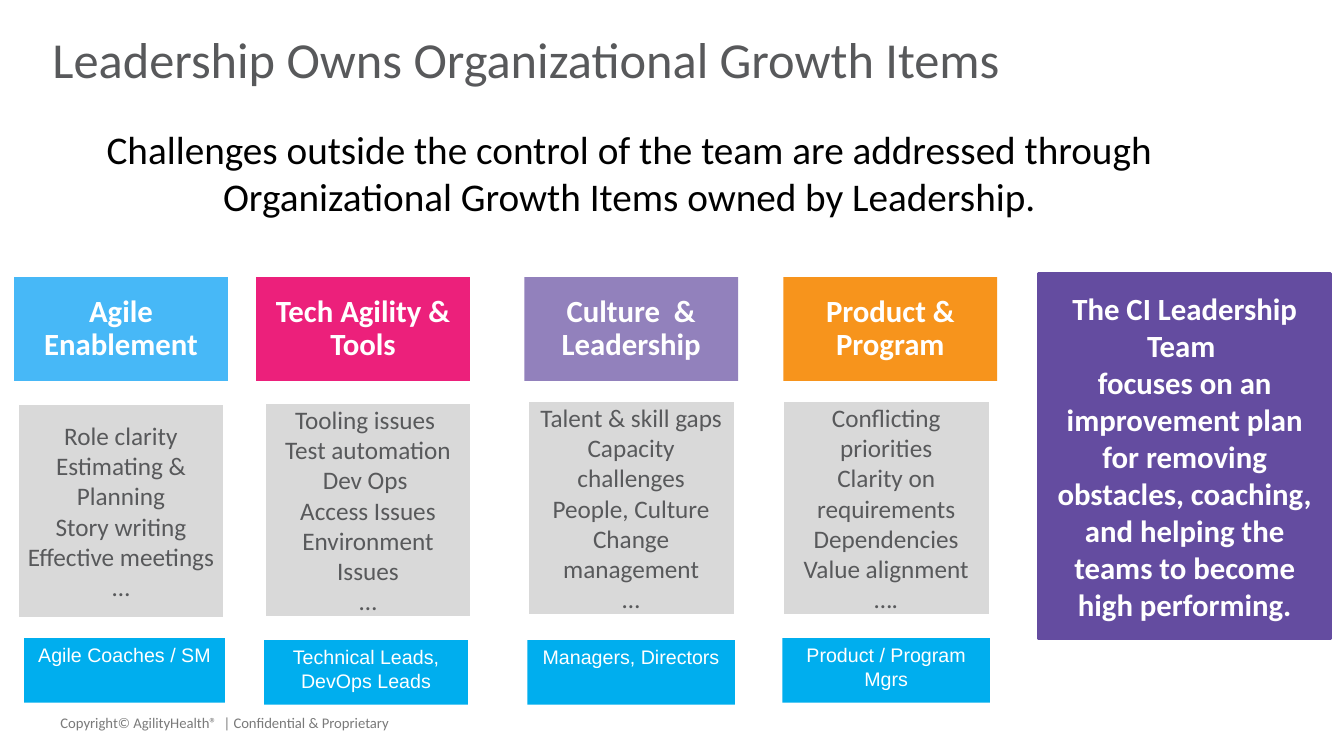
from dataclasses import dataclass

from pptx import Presentation
from pptx.dml.color import RGBColor
from pptx.enum.shapes import MSO_SHAPE
from pptx.enum.text import MSO_ANCHOR, PP_ALIGN
from pptx.util import Inches, Pt

WHITE = "FFFFFF"
GREY = "58595B"
PURPLE = "644CA0"


@dataclass
class Box:
    left: float
    top: float
    width: float
    height: float

    def inner(self, dx, dy, width, height):
        return Box(self.left + dx, self.top + dy, width, height)

    def lengths(self):
        return [Inches(v) for v in (self.left, self.top, self.width, self.height)]


@dataclass
class Column:
    left: float
    color: str
    heading: str
    issues: list
    issues_at: tuple  # offset from the column's top left corner
    owner: str
    owner_at: tuple
    owner_width: float


COLUMNS = [
    Column(0.14, "47B8F7", "Agile Enablement",
           ["Role clarity", "Estimating & Planning", "Story writing",
            "Effective meetings", "…"],
           (0.03, 1.25), "Agile Coaches / SM", (0.1, 3.58), 1.99),
    Column(2.54, "EC207B", "Tech Agility & Tools",
           ["Tooling issues ", "Test automation", "Dev Ops ",
            "Access Issues Environment Issues", "…"],
           (0.08, 1.24), "Technical Leads, DevOps Leads", (0.08, 3.6), 2.02),
    Column(5.2, "9281BC", "Culture  & Leadership",
           ["Talent & skill gaps", "Capacity challenges", "People, Culture",
            "Change management", "…"],
           (0.03, 1.22), "Managers, Directors", (0.03, 3.6), 2.06),
    Column(7.77, "F7941C", "Product & Program",
           ["Conflicting priorities", "Clarity on requirements", "Dependencies",
            "Value alignment", "…."],
           (-0.01, 1.22), "Product / Program Mgrs", (-0.01, 3.58), 2.06),
]


def rgb(color):
    return RGBColor.from_string(color)


def write(shape, paragraphs, size, color, font="Calibri", bold=False,
          align=PP_ALIGN.CENTER, anchor=MSO_ANCHOR.TOP, spacing=None,
          margins=(0.1, 0.05)):
    """Fill a shape with formatted paragraphs."""
    frame = shape.text_frame
    frame.word_wrap = True
    frame.vertical_anchor = anchor
    frame.margin_left = frame.margin_right = Inches(margins[0])
    frame.margin_top = frame.margin_bottom = Inches(margins[1])
    for index, text in enumerate(paragraphs):
        para = frame.add_paragraph() if index else frame.paragraphs[0]
        para.text = text
        para.alignment = align
        if spacing:
            para.line_spacing = spacing
        for span in para.runs:
            span.font.name = font
            span.font.size = Pt(size)
            span.font.bold = bold
            span.font.color.rgb = rgb(color)


def add_text(page, box, text, size, color, **style):
    write(page.shapes.add_textbox(*box.lengths()), [text], size, color, **style)


def add_panel(page, box, fill, paragraphs, size, color, line=None, **style):
    panel = page.shapes.add_shape(MSO_SHAPE.RECTANGLE, *box.lengths())
    panel.shadow.inherit = False
    panel.fill.solid()
    panel.fill.fore_color.rgb = rgb(fill)
    if line:
        panel.line.color.rgb = rgb(line)
        panel.line.width = Pt(2)
    else:
        panel.line.fill.background()
    write(panel, paragraphs, size, color, **style)


def add_header(page, box):
    # Title and introduction
    add_text(page, box.inner(0.52, 0.3, 12.29, 0.64),
             "Leadership Owns Organizational Growth Items", 36, GREY,
             align=PP_ALIGN.LEFT, anchor=MSO_ANCHOR.MIDDLE, spacing=0.9,
             margins=(0, 0))
    add_text(page, box.inner(0.94, 1.19, 10.6, 1.04),
             "Challenges outside the control of the team are addressed through "
             "Organizational Growth Items owned by Leadership.", 28, "000000")


def add_column(page, box, column):
    # Issues, their owner and the coloured heading
    add_panel(page, box.inner(*column.issues_at, 2.06, 2.14), "D9D9D9",
              column.issues, 18, GREY, line=WHITE, anchor=MSO_ANCHOR.MIDDLE)
    add_panel(page, box.inner(*column.owner_at, column.owner_width, 0.64),
              "00AEEE", [column.owner], 14, WHITE, font="Arial")
    add_panel(page, box.inner(0, 0, box.width, 1.03), column.color,
              [column.heading], 22, WHITE, bold=True, anchor=MSO_ANCHOR.MIDDLE,
              spacing=0.9, margins=(0.05, 0.03))


def add_leadership(page, box):
    # Purple summary panel
    add_panel(page, box, PURPLE,
              ["The CI Leadership Team \vfocuses on an improvement plan for "
               "removing obstacles, coaching, and helping the teams to become "
               "high performing."],
              22, WHITE, line=PURPLE, bold=True, anchor=MSO_ANCHOR.MIDDLE)


def add_footer(page, box):
    # Copyright line
    add_text(page, box, "Copyright© AgilityHealth®  | Confidential & Proprietary",
             10.5, "7A7A7A", align=PP_ALIGN.LEFT, margins=(0, 0))


def main():
    deck = Presentation()
    deck.slide_width, deck.slide_height = Inches(13.33), Inches(7.5)
    page = deck.slides.add_slide(deck.slide_layouts[6])
    add_footer(page, Box(0.6, 7.08, 4.5, 0.28))
    add_header(page, Box(0, 0, 13.33, 2.5))
    add_leadership(page, Box(10.3, 2.71, 2.9, 3.63))
    for column in COLUMNS:
        add_column(page, Box(column.left, 2.75, 2.12, 4.24), column)
    deck.save("out.pptx")


if __name__ == "__main__":
    main()
